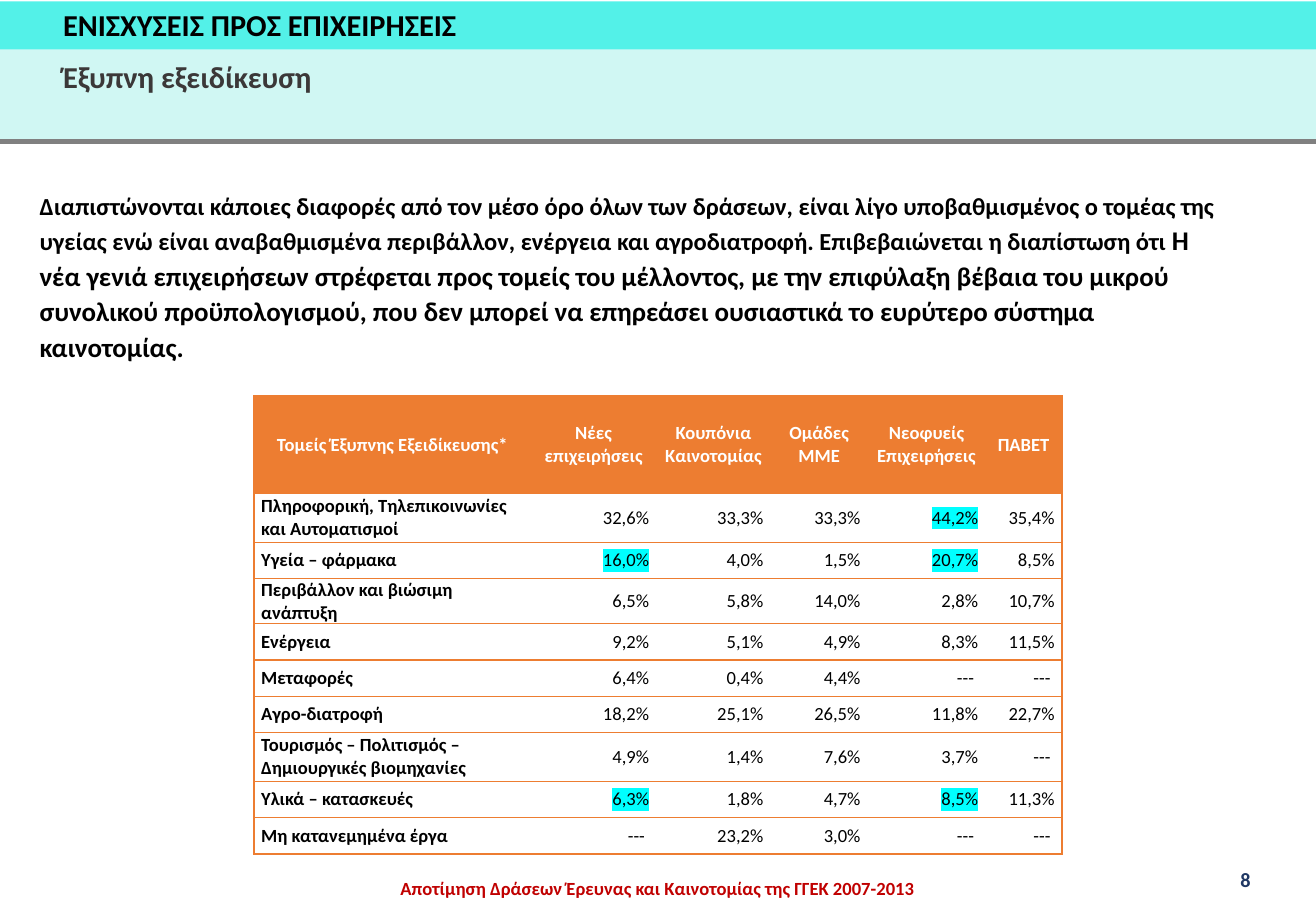
"""Builds the slide on smart specialisation in business support actions."""
from dataclasses import dataclass

from lxml import etree
from pptx import Presentation
from pptx.dml.color import RGBColor
from pptx.enum import shapes, text
from pptx.oxml import ns
from pptx.util import Cm, Pt


@dataclass(frozen=True)
class Theme:
    font: str = "Calibri"
    black: str = "000000"
    white: str = "FFFFFF"
    dark: str = "3B3838"
    navy: str = "203864"
    red: str = "C00000"
    orange: str = "ED7D31"
    grey: str = "808080"
    band: str = "53F1E8"
    pale_band: str = "D0F7F3"
    mark: str = "00FFFF"
    title: float = 18
    lead: float = 14.5
    claim: float = 16
    number: float = 12
    small: float = 11


theme = Theme()
PP = text.PP_ALIGN


def write(tf, words, size=theme.small, color=theme.black, bold=True,
          align=PP.LEFT, spacing=None, mark=None):
    p = tf.paragraphs[0]
    p.alignment = align
    if spacing:
        p.line_spacing = spacing
    r = p.add_run()
    r.text = words
    r.font.size, r.font.bold, r.font.name = Pt(size), bold, theme.font
    r.font.color.rgb = RGBColor.from_string(color)
    if mark:
        highlight = etree.Element(ns.qn("a:highlight"))
        etree.SubElement(highlight, ns.qn("a:srgbClr"), val=mark)
        r.font._element.find(ns.qn("a:latin")).addprevious(highlight)


prs = Presentation()
prs.slide_width, prs.slide_height = Cm(27.51), Cm(19.05)
s = prs.slides.add_slide(prs.slide_layouts[6])

for top, height, color in [(0.03, 1.01, theme.band), (1.04, 1.91, theme.pale_band)]:
    sp = s.shapes.add_shape(shapes.MSO_SHAPE.RECTANGLE, 0, Cm(top), prs.slide_width, Cm(height))
    sp.shadow.inherit = False
    sp.fill.solid()
    sp.fill.fore_color.rgb = RGBColor.from_string(color)
    sp.line.fill.background()

rule = s.shapes.add_connector(shapes.MSO_CONNECTOR.STRAIGHT, 0, Cm(2.95), prs.slide_width, Cm(2.95))
rule.line.color.rgb = RGBColor.from_string(theme.grey)
rule.line.width = Pt(3)
etree.SubElement(rule._element.spPr, ns.qn("a:effectLst"))

boxes = {}
for name, left, top, width, height in [
    ("title", 1.07, 0, 8.81, 1.02),
    ("subtitle", 1.07, 1.09, 14.99, 1.02),
    ("body", 0.58, 3.81, 25.07, 3.91),
    ("footer", 7.16, 17.91, 13.18, 0.97),
    ("number", 25.68, 18.01, 1.32, 0.76),
]:
    tf = s.shapes.add_textbox(Cm(left), Cm(top), Cm(width), Cm(height)).text_frame
    tf.word_wrap = name != "title"
    boxes[name] = tf

footer = boxes["footer"]
footer.margin_left = footer.margin_right = footer.margin_top = footer.margin_bottom = 0

write(boxes["title"], "ΕΝΙΣΧΥΣΕΙΣ ΠΡΟΣ ΕΠΙΧΕΙΡΗΣΕΙΣ", size=theme.title)
write(boxes["subtitle"], "Έξυπνη εξειδίκευση", size=theme.title, color=theme.dark)
write(boxes["body"],
      "Διαπιστώνονται κάποιες διαφορές από τον μέσο όρο όλων των δράσεων, είναι λίγο "
      "υποβαθμισμένος ο τομέας της υγείας ενώ είναι αναβαθμισμένα περιβάλλον, ενέργεια και "
      "αγροδιατροφή. Επιβεβαιώνεται η διαπίστωση ότι ", size=theme.lead, spacing=1.1)
write(boxes["body"],
      "Η νέα γενιά επιχειρήσεων στρέφεται προς τομείς του μέλλοντος, με την επιφύλαξη βέβαια "
      "του μικρού συνολικού προϋπολογισμού, που δεν μπορεί να επηρεάσει ουσιαστικά το "
      "ευρύτερο σύστημα καινοτομίας.", size=theme.claim, spacing=1.1)
write(footer, "Aποτίμηση Δράσεων Έρευνας και Καινοτομίας της ΓΓΕΚ 2007-2013",
      color=theme.red, align=PP.CENTER, spacing=Pt(25.3))
write(boxes["number"], "8", size=theme.number, color=theme.navy)

rows = [
    ("Τομείς Έξυπνης Εξειδίκευσης*", "Νέες επιχειρήσεις", "Κουπόνια Καινοτομίας",
     "Ομάδες ΜΜΕ", "Νεοφυείς Επιχειρήσεις", "ΠΑΒΕΤ"),
    ("Πληροφορική, Τηλεπικοινωνίες και Αυτοματισμοί", "32,6%", "33,3%", "33,3%", "44,2%", "35,4%"),
    ("Υγεία – φάρμακα", "16,0%", "4,0%", "1,5%", "20,7%", "8,5%"),
    ("Περιβάλλον και βιώσιμη ανάπτυξη", "6,5%", "5,8%", "14,0%", "2,8%", "10,7%"),
    ("Ενέργεια", "9,2%", "5,1%", "4,9%", "8,3%", "11,5%"),
    ("Μεταφορές", "6,4%", "0,4%", "4,4%", "--- ", "--- "),
    ("Αγρο-διατροφή", "18,2%", "25,1%", "26,5%", "11,8%", "22,7%"),
    ("Τουρισμός – Πολιτισμός – Δημιουργικές βιομηχανίες", "4,9%", "1,4%", "7,6%", "3,7%", "--- "),
    ("Υλικά – κατασκευές", "6,3%", "1,8%", "4,7%", "8,5%", "11,3%"),
    ("Μη κατανεμημένα έργα", "--- ", "23,2%", "3,0%", "--- ", "--- "),
]
marked = {(1, 4), (2, 1), (2, 4), (8, 1), (8, 4)}
widths = [5.79, 2.62, 2.39, 2.03, 2.46, 1.6]
heights = [2.04, 1.02, 0.76, 0.94, 0.76, 0.76, 0.76, 1.02, 0.76, 0.76]

table = s.shapes.add_table(len(rows), len(widths), Cm(5.31), Cm(8.28),
                           Cm(sum(widths)), Cm(sum(heights))).table
table.horz_banding = False
table._tbl.tblPr.find(ns.qn("a:tableStyleId")).text = "{2D5ABB26-0587-4C30-8999-92F81FD0307C}"
for column, width in zip(table.columns, widths):
    column.width = Cm(width)

for i, (row, height) in enumerate(zip(rows, heights)):
    table.rows[i].height = Cm(height)
    for j, words in enumerate(row):
        cell = table.cell(i, j)
        cell.margin_left = cell.margin_right = Cm(0.15)
        cell.margin_top = cell.margin_bottom = 0
        cell.vertical_anchor = text.MSO_ANCHOR.MIDDLE
        edges = ["lnL"] * (j == 0) + ["lnR"] * (j == len(row) - 1) + ["lnT", "lnB"]
        for edge in edges:
            ln = etree.SubElement(cell._tc.get_or_add_tcPr(), ns.qn(f"a:{edge}"), w=str(Pt(1)))
            fill = etree.SubElement(ln, ns.qn("a:solidFill"))
            etree.SubElement(fill, ns.qn("a:srgbClr"), val=theme.orange)
        cell.fill.solid()
        cell.fill.fore_color.rgb = RGBColor.from_string(theme.white if i else theme.orange)
        write(cell.text_frame, words,
              color=theme.black if i else theme.white,
              bold=i == 0 or j == 0,
              align=PP.CENTER if i == 0 else PP.RIGHT if j else PP.LEFT,
              mark=theme.mark if (i, j) in marked else None)

prs.save("out.pptx")
